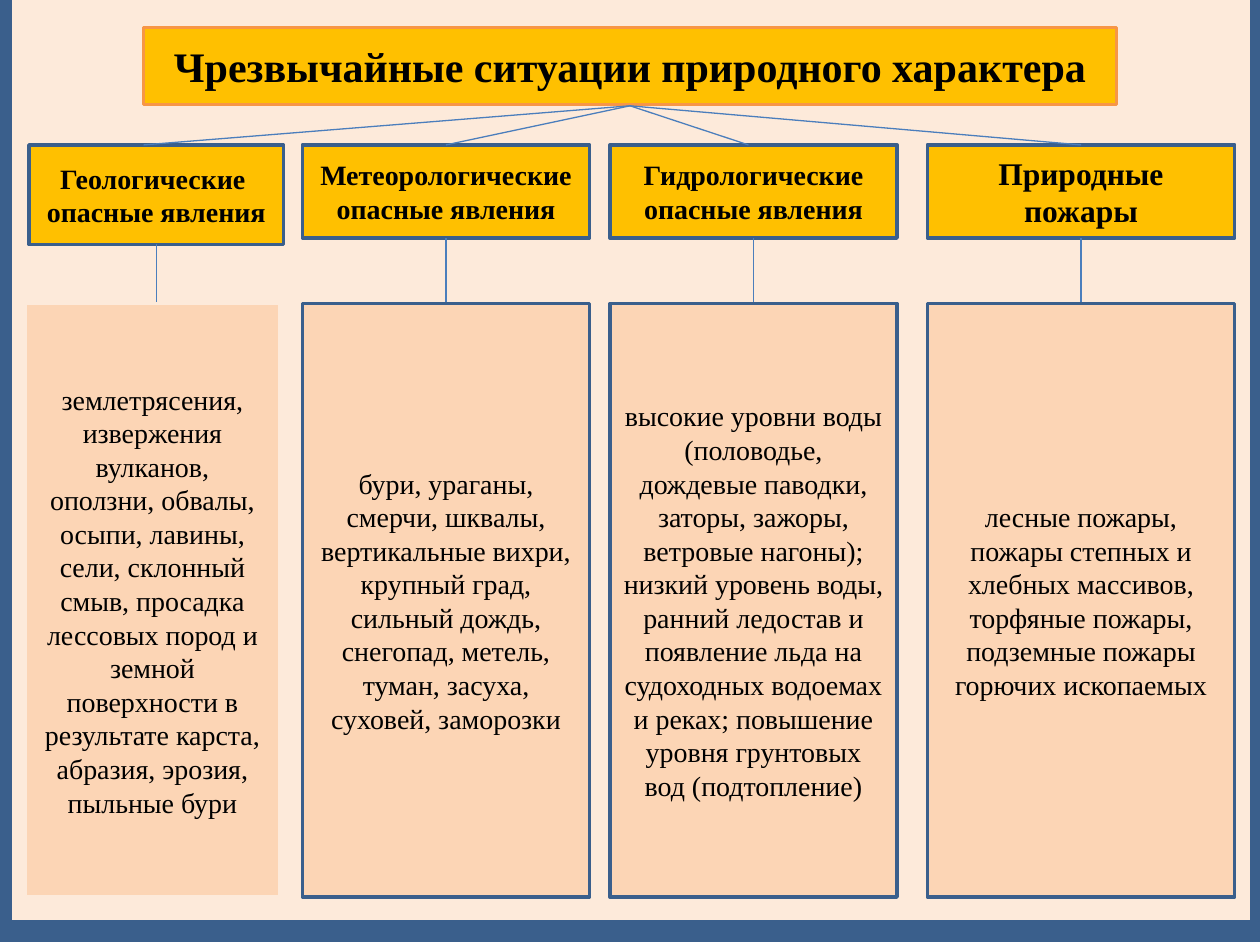
"""Build a slide that sorts natural emergencies into four groups."""
from lxml import etree
from pptx import Presentation
from pptx.dml.color import RGBColor
from pptx.enum.shapes import MSO_CONNECTOR, MSO_SHAPE
from pptx.enum.text import MSO_ANCHOR, MSO_AUTO_SIZE, PP_ALIGN
from pptx.oxml.ns import qn
from pptx.util import Inches, Pt

RECTANGLE = MSO_SHAPE.RECTANGLE
STRAIGHT = MSO_CONNECTOR.STRAIGHT
MIDDLE = MSO_ANCHOR.MIDDLE
CENTER = PP_ALIGN.CENTER
NO_AUTOFIT = MSO_AUTO_SIZE.NONE

THEME = {
    "font": "Times New Roman",
    "text": "000000",
    "background": "FDEADA",
    "heading": "FFC000",
    "body": "FCD5B5",
    "border": "3A5F8C",
    "title_border": "F79646",
    "connector": "4B7EBC",
    "title_size": 24,
    "large_size": 18,
    "text_size": 16,
    "frame_width": 12.25,
    "border_width": 2,
    "connector_width": 0.75,
}

TITLE = "Чрезвычайные ситуации природного характера"
TITLE_BOX = (1.14, 0.22, 7.72, 0.61)
FRAME_BOX = (0.01, -0.11, 10, 7.5)
HEADING_TOP, HEADING_HEIGHT = 1.15, 0.74
BODY_TOP, BODY_HEIGHT = 2.41, 4.71
FAN_START = (5, 0.84)

COLUMNS = [
    {
        "heading": ["Геологические ", "опасные явления"],
        "body": [
            "землетрясения,",
            "извержения вулканов,",
            "оползни, обвалы, осыпи, лавины, сели, склонный смыв, просадка "
            "лессовых пород и земной поверхности в результате карста, "
            "абразия, эрозия, пыльные бури",
        ],
        "left": 0.23, "width": 2.02, "fan_end": 1.14,
        "heading_height": 0.79, "body_left": 0.2, "body_border": "background",
    },
    {
        "heading": ["Метеорологические опасные явления"],
        "body": [
            "бури, ураганы, смерчи, шквалы, вертикальные вихри, крупный град, "
            "сильный дождь, снегопад, метель, туман, засуха, суховей, заморозки",
        ],
        "left": 2.4, "width": 2.28,
    },
    {
        "heading": ["Гидрологические опасные явления"],
        "body": [
            "высокие уровни воды (половодье, дождевые паводки, заторы, зажоры, "
            "ветровые нагоны); низкий уровень воды, ранний ледостав и появление "
            "льда на судоходных водоемах и реках; повышение уровня грунтовых "
            "вод (подтопление)",
        ],
        "left": 4.84, "width": 2.28, "fan_end": 5.94,
    },
    {
        "heading": ["Природные пожары"],
        "body": [
            "лесные пожары, пожары степных и хлебных массивов, торфяные пожары, "
            "подземные пожары горючих ископаемых",
        ],
        "left": 7.36, "width": 2.44, "heading_size": "large_size",
    },
]


def color(name):
    return RGBColor.from_string(THEME[name])


def style_box(shape, fill, border, width="border_width"):
    shape.fill.solid()
    shape.fill.fore_color.rgb = color(fill)
    shape.line.color.rgb = color(border)
    shape.line.width = Pt(THEME[width])


def write_text(shape, lines, size="text_size", bold=False):
    frame = shape.text_frame
    frame.auto_size = NO_AUTOFIT
    frame.word_wrap = True
    frame.vertical_anchor = MIDDLE
    frame.text = "\n".join(lines)
    for paragraph in frame.paragraphs:
        paragraph.alignment = CENTER
        font = paragraph.runs[0].font
        font.name = THEME["font"]
        font.size = Pt(THEME[size])
        font.bold = bold
        font.color.rgb = color("text")


def add_box(slide, box, fill, border, width="border_width"):
    shape = slide.shapes.add_shape(RECTANGLE, *map(Inches, box))
    shape.shadow.inherit = False
    style_box(shape, fill, border, width)
    return shape


def add_line(slide, start, end):
    line = slide.shapes.add_connector(STRAIGHT, *map(Inches, start + end))
    line.line.color.rgb = color("connector")
    line.line.width = Pt(THEME["connector_width"])
    etree.SubElement(line.element.spPr, qn("a:effectLst"))


def add_title(slide):
    title = slide.shapes.title
    title.left, title.top, title.width, title.height = map(Inches, TITLE_BOX)
    style_box(title, "heading", "title_border")
    write_text(title, [TITLE], size="title_size", bold=True)
    frame = add_box(slide, FRAME_BOX, "background", "border", "frame_width")
    title.element.addprevious(frame.element)


def add_column(slide, column):
    left, width = column["left"], column["width"]
    center = left + width / 2
    height = column.get("heading_height", HEADING_HEIGHT)
    heading = add_box(slide, (left, HEADING_TOP, width, height), "heading", "border")
    write_text(heading, column["heading"], column.get("heading_size", "text_size"), bold=True)
    add_line(slide, FAN_START, (column.get("fan_end", center), HEADING_TOP))
    add_line(slide, (center, HEADING_TOP + height), (center, BODY_TOP))
    body_box = (column.get("body_left", left), BODY_TOP, width, BODY_HEIGHT)
    body = add_box(slide, body_box, "body", column.get("body_border", "border"))
    write_text(body, column["body"])


def main():
    presentation = Presentation()
    presentation.slide_width, presentation.slide_height = Inches(10), Inches(7.5)
    slide = presentation.slides.add_slide(presentation.slide_layouts[5])
    add_title(slide)
    for column in COLUMNS:
        add_column(slide, column)
    presentation.save("out.pptx")


if __name__ == "__main__":
    main()
